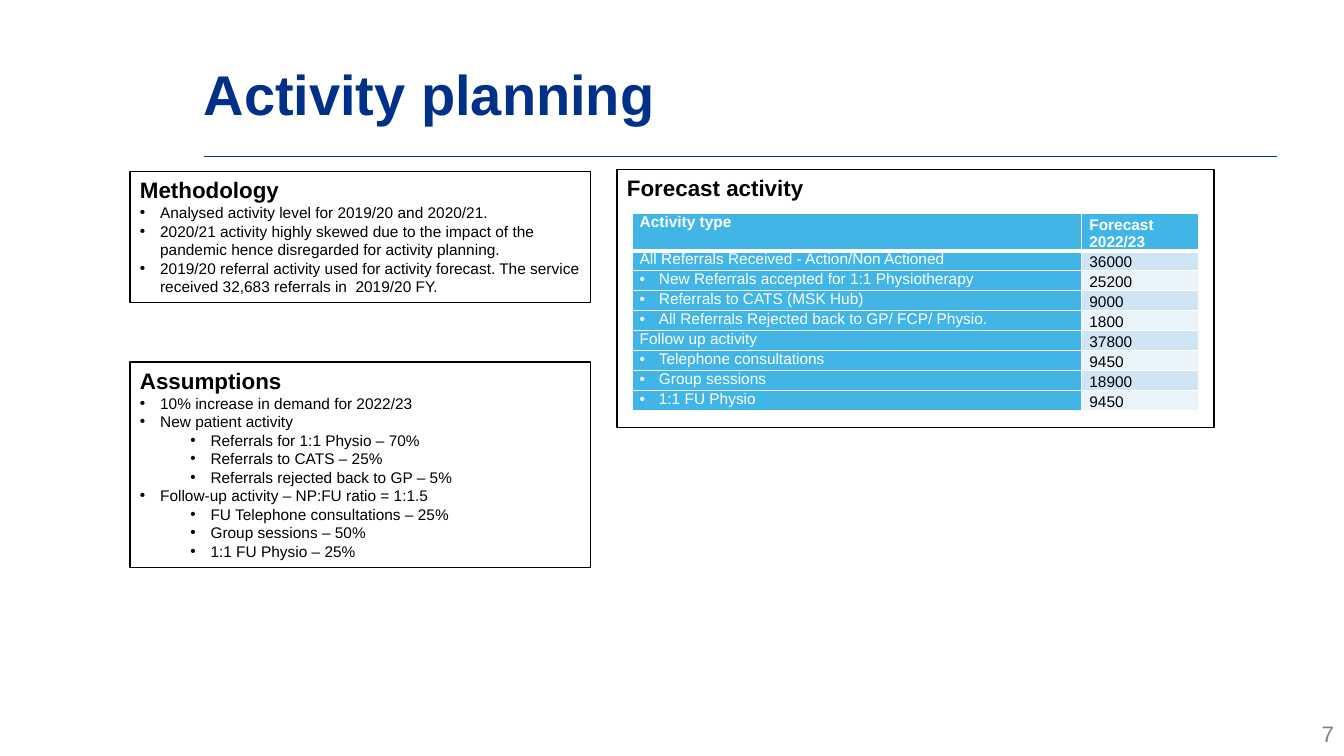
import pptx
import pptx.dml.color
import pptx.enum.shapes
import pptx.enum.text
import pptx.oxml
import pptx.oxml.ns
import pptx.util

TITLE = "Activity planning"
PAGE_NUMBER = "7"
METHODOLOGY = [
    (0, "Analysed activity level for 2019/20 and 2020/21."),
    (0, "2020/21 activity highly skewed due to the impact of the pandemic hence disregarded for activity planning."),
    (0, "2019/20 referral activity used for activity forecast. The service received 32,683 referrals in  2019/20 FY."),
]
ASSUMPTIONS = [
    (0, "10% increase in demand for 2022/23"),
    (0, "New patient activity"),
    (1, "Referrals for 1:1 Physio – 70%"),
    (1, "Referrals to CATS – 25%"),
    (1, "Referrals rejected back to GP – 5%"),
    (0, "Follow-up activity – NP:FU ratio = 1:1.5"),
    (1, "FU Telephone consultations – 25%"),
    (1, "Group sessions – 50%"),
    (1, "1:1 FU Physio – 25%"),
]
FORECAST_HEADER = ("Activity type", "Forecast 2022/23")
FORECAST = [
    (False, "All Referrals Received - Action/Non Actioned", 36000),
    (True, "New Referrals accepted for 1:1 Physiotherapy", 25200),
    (True, "Referrals to CATS (MSK Hub)", 9000),
    (True, "All Referrals Rejected back to GP/ FCP/ Physio.", 1800),
    (False, "Follow up activity", 37800),
    (True, "Telephone consultations", 9450),
    (True, "Group sessions", 18900),
    (True, "1:1 FU Physio", 9450),
]

NAVY = pptx.dml.color.RGBColor(0x00, 0x30, 0x87)
SKY = pptx.dml.color.RGBColor(0x41, 0xB6, 0xE6)
BANDS = (pptx.dml.color.RGBColor(0xCF, 0xE5, 0xF5), pptx.dml.color.RGBColor(0xE9, 0xF3, 0xFA))
BLACK = pptx.dml.color.RGBColor(0, 0, 0)
WHITE = pptx.dml.color.RGBColor(0xFF, 0xFF, 0xFF)
GREY = pptx.dml.color.RGBColor(0x80, 0x80, 0x80)

SLIDE_WIDTH, SLIDE_HEIGHT = 13.33, 7.5
TITLE_LEFT, TITLE_TOP, TITLE_WIDTH, TITLE_HEIGHT = 2.02, 0.3, 10.65, 1.25
LEFT_COLUMN, LEFT_WIDTH = 1.29, 4.57
PANELS = [
    ("Methodology", METHODOLOGY, (LEFT_COLUMN, 1.7, LEFT_WIDTH, 1.3)),
    ("Assumptions", ASSUMPTIONS, (LEFT_COLUMN, 3.59, LEFT_WIDTH, 2.04)),
    ("Forecast activity", [], (6.12, 1.68, 5.92, 2.56)),
]
TABLE_LEFT, TABLE_TOP, TABLE_HEIGHT = 6.27, 2.12, 1.95
COLUMN_WIDTHS = (4.46, 1.16)
HEADER_HEIGHT = 0.36
ROW_HEIGHT = (TABLE_HEIGHT - HEADER_HEIGHT) / len(FORECAST)
NUMBER_WIDTH, NUMBER_HEIGHT = 0.67, 0.37
BODY_SIZE = 11
LEVEL_STEP = 0.5


def inches(*lengths):
    return [pptx.util.Inches(length) for length in lengths]


def style(paragraph, size, color, bold=False):
    for run in paragraph.runs:
        run.font.name = "Arial"
        run.font.size = pptx.util.Pt(size)
        run.font.bold = bold
        run.font.color.rgb = color


def add_bullet(paragraph, left, hanging):
    properties = paragraph._p.get_or_add_pPr()
    properties.set("marL", str(pptx.util.Inches(left)))
    properties.set("indent", str(-pptx.util.Inches(hanging)))
    namespace = pptx.oxml.ns.nsdecls("a")
    properties.append(pptx.oxml.parse_xml(f'<a:buFont {namespace} typeface="Arial"/>'))
    properties.append(pptx.oxml.parse_xml(f'<a:buChar {namespace} char="•"/>'))


def add_panel(slide, heading, points, box):
    panel = slide.shapes.add_shape(pptx.enum.shapes.MSO_SHAPE.RECTANGLE, *inches(*box))
    panel.shadow.inherit = False
    panel.fill.background()
    panel.line.color.rgb = BLACK
    panel.line.width = pptx.util.Pt(1)
    frame = panel.text_frame
    frame.word_wrap = True
    frame.vertical_anchor = pptx.enum.text.MSO_ANCHOR.TOP
    frame.text = heading
    style(frame.paragraphs[0], 16, BLACK, True)
    for level, text in points:
        paragraph = frame.add_paragraph()
        paragraph.text = text
        paragraph.level = level
        add_bullet(paragraph, 0.2 + level * LEVEL_STEP, 0.2)
        style(paragraph, BODY_SIZE, BLACK)
    for paragraph in frame.paragraphs:
        paragraph.alignment = pptx.enum.text.PP_ALIGN.LEFT


def add_borders(cell, top, bottom):
    properties = cell._tc.get_or_add_tcPr()
    for side, width in (("L", 1), ("R", 1), ("T", top), ("B", bottom)):
        properties.append(pptx.oxml.parse_xml(
            f'<a:ln{side} {pptx.oxml.ns.nsdecls("a")} w="{pptx.util.Pt(width)}">'
            f'<a:solidFill><a:srgbClr val="{WHITE}"/></a:solidFill></a:ln{side}>'))


def fill_cell(cell, text, row, is_value, bulleted=False):
    header = row == 0
    add_borders(cell, 3 if row == 1 else 1, 3 if header else 1)
    cell.fill.solid()
    cell.fill.fore_color.rgb = BANDS[(row - 1) % 2] if is_value and not header else SKY
    cell.margin_left = cell.margin_right = pptx.util.Pt(5.4)
    cell.margin_top = cell.margin_bottom = 0
    anchors = pptx.enum.text.MSO_ANCHOR
    cell.vertical_anchor = anchors.BOTTOM if is_value else anchors.TOP
    cell.text_frame.text = text
    paragraph = cell.text_frame.paragraphs[0]
    if bulleted:
        add_bullet(paragraph, 0.19, 0.19)
    style(paragraph, BODY_SIZE, BLACK if is_value and not header else WHITE, header)


def add_forecast_table(slide):
    table = slide.shapes.add_table(
        len(FORECAST) + 1, len(COLUMN_WIDTHS),
        *inches(TABLE_LEFT, TABLE_TOP, sum(COLUMN_WIDTHS), TABLE_HEIGHT)).table
    table.horz_banding = False
    for column, width in zip(table.columns, COLUMN_WIDTHS):
        column.width = pptx.util.Inches(width)
    for index, row in enumerate(table.rows):
        row.height = pptx.util.Inches(ROW_HEIGHT if index else HEADER_HEIGHT)
    for index, (bulleted, activity, value) in enumerate([(False, *FORECAST_HEADER)] + FORECAST):
        fill_cell(table.cell(index, 0), activity, index, False, bulleted)
        fill_cell(table.cell(index, 1), str(value), index, True)


def add_title(slide):
    title = slide.shapes.title
    title.left, title.top, title.width, title.height = inches(
        TITLE_LEFT, TITLE_TOP, TITLE_WIDTH, TITLE_HEIGHT)
    frame = title.text_frame
    frame.text = TITLE
    frame.margin_left = frame.margin_right = frame.margin_top = frame.margin_bottom = 0
    frame.vertical_anchor = pptx.enum.text.MSO_ANCHOR.MIDDLE
    frame.paragraphs[0].alignment = pptx.enum.text.PP_ALIGN.LEFT
    style(frame.paragraphs[0], 40, NAVY, True)
    bottom = TITLE_TOP + TITLE_HEIGHT
    rule = slide.shapes.add_connector(
        pptx.enum.shapes.MSO_CONNECTOR.STRAIGHT,
        *inches(TITLE_LEFT, bottom, TITLE_LEFT + TITLE_WIDTH, bottom))
    rule.line.color.rgb = NAVY
    rule.line.width = pptx.util.Pt(0.5)
    rule._element.spPr.append(pptx.oxml.parse_xml(f'<a:effectLst {pptx.oxml.ns.nsdecls("a")}/>'))


def add_page_number(slide):
    number = slide.shapes.add_textbox(*inches(
        SLIDE_WIDTH - NUMBER_WIDTH, 7.1, NUMBER_WIDTH, NUMBER_HEIGHT))
    number.text_frame.word_wrap = True
    number.text_frame.text = PAGE_NUMBER
    paragraph = number.text_frame.paragraphs[0]
    paragraph.alignment = pptx.enum.text.PP_ALIGN.RIGHT
    style(paragraph, 16, GREY)


def main():
    presentation = pptx.Presentation()
    presentation.slide_width, presentation.slide_height = inches(SLIDE_WIDTH, SLIDE_HEIGHT)
    slide = presentation.slides.add_slide(presentation.slide_layouts.get_by_name("Title Only"))
    add_title(slide)
    add_page_number(slide)
    for heading, points, box in PANELS:
        add_panel(slide, heading, points, box)
    add_forecast_table(slide)
    presentation.save("out.pptx")


if __name__ == "__main__":
    main()
